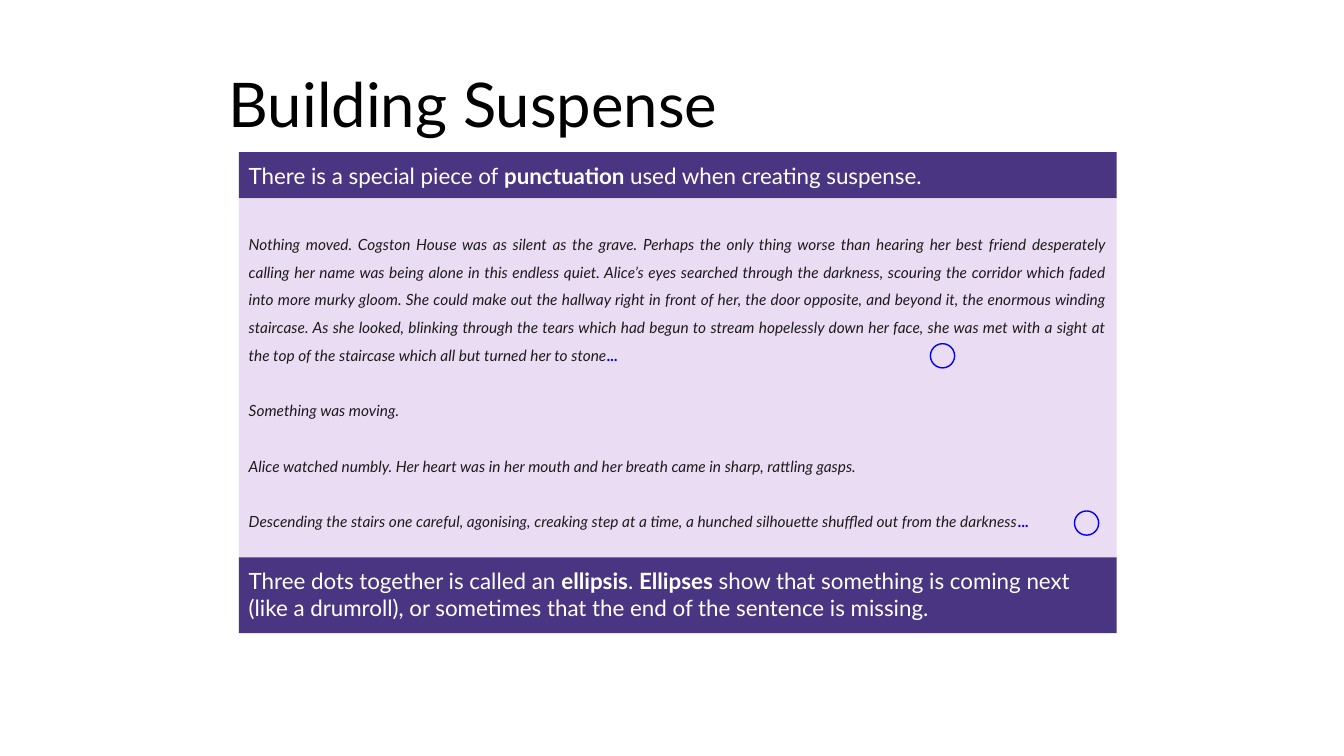
from pptx import Presentation
from pptx import util as u
from pptx.dml.color import RGBColor
from pptx.enum import shapes, text

COLORS = {"title": "000000", "band": "4A3582", "panel": "EADCF2",
          "light": "FFFFFF", "ink": "1C1C1C", "mark": "0000FF"}
LEFT, WIDTH = 170.6, 627.1
RING = 17.3

STORY = [
    [("Nothing moved. Cogston House was as silent as the grave. Perhaps the only thing worse than "
      "hearing her best friend desperately calling her name was being alone in this endless quiet. "
      "Alice’s eyes searched through the darkness, scouring the corridor which faded into more murky "
      "gloom. She could make out the hallway right in front of her, the door opposite, and beyond it, "
      "the enormous winding staircase. As she looked, blinking through the tears which had begun to "
      "stream hopelessly down her face, she was met with a sight at the top of the staircase which "
      "all but turned her to stone", "ink", False),
     ("...", "mark", True)],
    [("Something was moving.", "ink", False)],
    [("Alice watched numbly. Her heart was in her mouth and her breath came in sharp, "
      "rattling gasps.", "ink", False)],
    [("Descending the stairs one careful, agonising, creaking step at a time, a hunched silhouette "
      "shuffled out from the darkness", "ink", False),
     ("...", "mark", True)],
]
INTRO = [("There is a special piece of ", "light", False),
         ("punctuation ", "light", True),
         ("used when creating suspense.", "light", False)]
RULE = [("Three dots together is called an ", "light", False),
        ("ellipsis", "light", True),
        (". ", "light", False),
        ("Ellipses", "light", True),
        (" show that something is coming next (like a drumroll), or sometimes that the end of the "
         "sentence is missing.", "light", False)]


class Deck:
    """Holds the presentation, its text style and the current slide."""
    font = "Lato"

    def __init__(self, width, height):
        self.prs = Presentation()
        self.prs.slide_width, self.prs.slide_height = u.Pt(width), u.Pt(height)
        self.s = self.prs.slides.add_slide(self.prs.slide_layouts[5])

    def color(self, name):
        return RGBColor.from_string(COLORS[name])

    def add_runs(self, p, runs, size, italic=False):
        for words, color, bold in runs:
            r = p.add_run()
            r.text = words
            f = r.font
            f.name, f.size, f.bold, f.italic = self.font, u.Pt(size), bold, italic
            f.color.rgb = self.color(color)

    def title(self, words, x, y, w, h):
        sp = self.s.shapes.title
        sp.left, sp.top, sp.width, sp.height = (u.Pt(v) for v in (x, y, w, h))
        tf = sp.text_frame
        tf.vertical_anchor = text.MSO_ANCHOR.MIDDLE
        p = tf.paragraphs[0]
        p.alignment, p.line_spacing = text.PP_ALIGN.LEFT, 0.9
        self.add_runs(p, [(words, "title", False)], 44)

    def shape(self, kind, x, y, w, h):
        sp = self.s.shapes.add_shape(kind, *(u.Pt(v) for v in (x, y, w, h)))
        sp.shadow.inherit = False
        return sp

    def box(self, y, h, fill, anchor):
        """Adds a full-width filled box and returns its text frame."""
        sp = self.shape(shapes.MSO_SHAPE.RECTANGLE, LEFT, y, WIDTH, h)
        sp.fill.solid()
        sp.fill.fore_color.rgb = self.color(fill)
        sp.line.fill.background()
        tf = sp.text_frame
        tf.word_wrap, tf.vertical_anchor = True, anchor
        tf.margin_left = tf.margin_right = tf.margin_top = tf.margin_bottom = u.Pt(7.2)
        return tf

    def band(self, y, h, runs):
        p = self.box(y, h, "band", text.MSO_ANCHOR.TOP).paragraphs[0]
        p.alignment = text.PP_ALIGN.LEFT
        self.add_runs(p, runs, 16)

    def story(self, y, h, paragraphs):
        tf = self.box(y, h, "panel", text.MSO_ANCHOR.MIDDLE)
        for i, runs in enumerate(paragraphs):
            p = tf.add_paragraph() if i else tf.paragraphs[0]
            p.alignment, p.line_spacing = text.PP_ALIGN.JUSTIFY, 1.5
            p.space_before = u.Pt(19.8 if i else 0)
            self.add_runs(p, runs, 11, italic=True)

    def ring(self, x, y):
        sp = self.shape(shapes.MSO_SHAPE.OVAL, x, y, RING, RING)
        sp.fill.background()
        sp.line.color.rgb = self.color("mark")
        sp.line.width = u.Pt(1)


def main():
    deck = Deck(960, 540)
    deck.title("Building Suspense", 156.2, 37.4, 647.3, 78.5)
    deck.band(108.7, 33.1, INTRO)
    deck.story(141.8, 257, STORY)
    deck.band(398.2, 54, RULE)
    for x, y in ((664.6, 245.5), (767.5, 365)):
        deck.ring(x, y)
    deck.prs.save("out.pptx")


if __name__ == "__main__":
    main()
